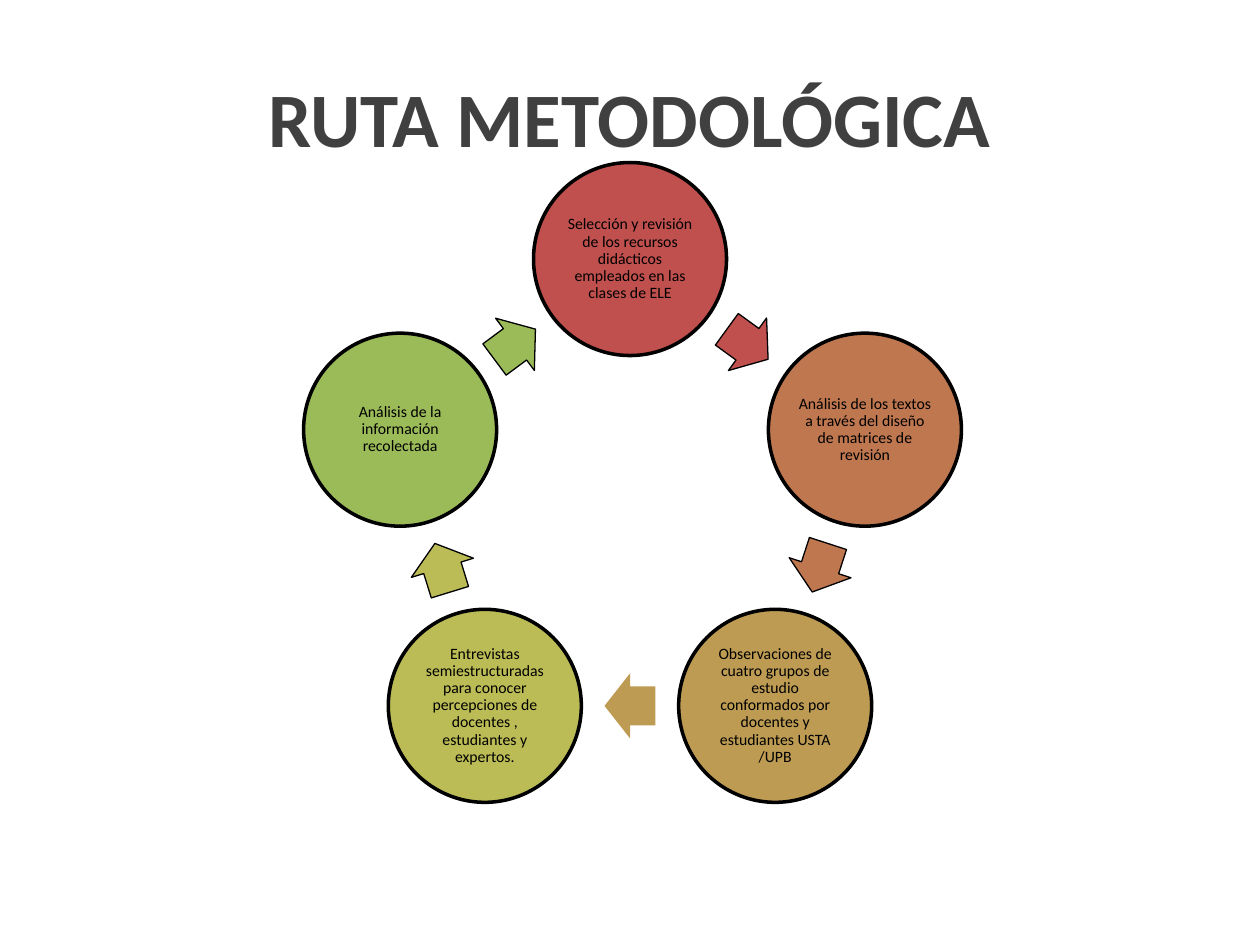
import math

import pptx
import pptx.dml.color
import pptx.enum.shapes
import pptx.enum.text
import pptx.util

EMU_PER_PX = 914400 / 126
FONT = "Calibri"
BLACK = "000000"
TITLE_COLOR = "404040"

# Cycle geometry in px
CENTER_X, CENTER_Y, RADIUS = 630, 506, 247
CIRCLE_SIZE = 193
ARROW_LENGTH, ARROW_WIDTH = 51, 65

# Text, fill, sideways shift of the circle, line width of the arrow that follows
STEPS = [
    ("Selección y revisión de los recursos didácticos empleados en las clases de ELE",
     "C0504D", 0, 0.75),
    ("Análisis de los textos a través del diseño de matrices de revisión",
     "BF7750", 0, 0.75),
    ("Observaciones de cuatro grupos de estudio conformados por docentes y estudiantes USTA /UPB",
     "BD9B53", 0, 0),
    ("Entrevistas semiestructuradas para conocer percepciones de docentes , estudiantes y expertos.",
     "BCBC56", 0, 0.75),
    ("Análisis de la información recolectada",
     "9BBB59", 5, 0.75),
]


def px(length):
    return pptx.util.Emu(round(length * EMU_PER_PX))


def color(value):
    return pptx.dml.color.RGBColor.from_string(value)


class SlideBuilder:
    def __init__(self, presentation):
        self.slide = presentation.slides.add_slide(presentation.slide_layouts[5])

    def add_text(self, shape, text, size, text_color, bold=False):
        frame = shape.text_frame
        frame.word_wrap = True
        frame.vertical_anchor = pptx.enum.text.MSO_ANCHOR.MIDDLE
        paragraph = frame.paragraphs[0]
        paragraph.alignment = pptx.enum.text.PP_ALIGN.CENTER
        run = paragraph.add_run()
        run.text = text
        run.font.name = FONT
        run.font.size = pptx.util.Pt(size)
        run.font.bold = bold
        run.font.color.rgb = color(text_color)
        return frame

    def title(self, text, left, top, width, height):
        shape = self.slide.shapes.title
        shape.left, shape.top = px(left), px(top)
        shape.width, shape.height = px(width), px(height)
        self.add_text(shape, text, 44, TITLE_COLOR, bold=True)

    def centered_shape(self, kind, center, width, height, fill, line_width):
        x, y = center
        shape = self.slide.shapes.add_shape(
            kind, px(x - width / 2), px(y - height / 2), px(width), px(height))
        shape.shadow.inherit = False
        shape.fill.solid()
        shape.fill.fore_color.rgb = color(fill)
        if line_width:
            shape.line.color.rgb = color(BLACK)
            shape.line.width = pptx.util.Pt(line_width)
        else:
            shape.line.fill.background()
        return shape

    def circle(self, center, text, fill):
        shape = self.centered_shape(
            pptx.enum.shapes.MSO_SHAPE.OVAL, center, CIRCLE_SIZE, CIRCLE_SIZE, fill, 2)
        frame = self.add_text(shape, text, 9, BLACK)
        frame.margin_left = frame.margin_right = px(1)
        frame.margin_top = frame.margin_bottom = px(1)
        frame.paragraphs[0].line_spacing = 0.9

    def arrow_between(self, start, end, fill, line_width):
        middle = ((start[0] + end[0]) / 2, (start[1] + end[1]) / 2)
        shape = self.centered_shape(
            pptx.enum.shapes.MSO_SHAPE.RIGHT_ARROW, middle,
            ARROW_LENGTH, ARROW_WIDTH, fill, line_width)
        shape.adjustments[0] = 0.6
        shape.adjustments[1] = 0.5
        angle = math.degrees(math.atan2(end[1] - start[1], end[0] - start[0]))
        shape.rotation = round(angle % 360, 1)


def main():
    presentation = pptx.Presentation()
    presentation.slide_width = px(1260)
    presentation.slide_height = px(945)
    builder = SlideBuilder(presentation)
    builder.title("RUTA METODOLÓGICA", 63, 38, 1134, 158)

    # Circle centers, clockwise from the top
    centers = []
    for index, (_, _, shift, _) in enumerate(STEPS):
        angle = 2 * math.pi * index / len(STEPS)
        centers.append((CENTER_X + RADIUS * math.sin(angle) + shift,
                        CENTER_Y - RADIUS * math.cos(angle)))

    # Each step and the arrow to the next one
    for index, (text, fill, _, line_width) in enumerate(STEPS):
        following = centers[(index + 1) % len(STEPS)]
        builder.circle(centers[index], text, fill)
        builder.arrow_between(centers[index], following, fill, line_width)

    presentation.save("out.pptx")


if __name__ == "__main__":
    main()
